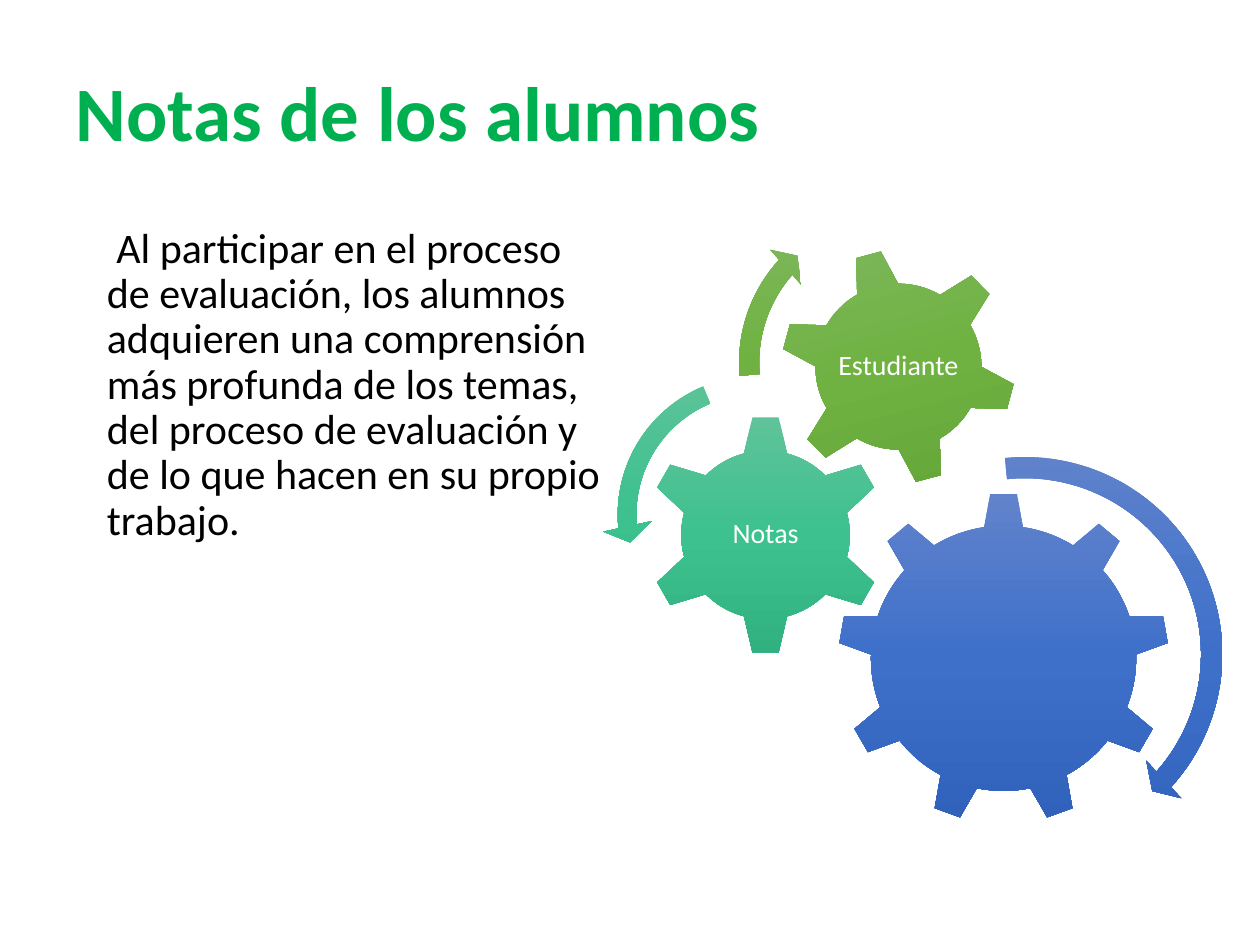
from copy import deepcopy

from pptx import Presentation
from pptx.dml import color
from pptx.enum import shapes, text
from pptx.oxml import ns
from pptx.util import Pt

FONT = "Calibri"
COLORS = {
    "title": "00B050",
    "body": "000000",
    "label": "FFFFFF",
    "blue": ("6183CB", "3E70CA", "3062BB"),
    "teal": ("60C39A", "3DC18F", "31B080"),
    "green": ("81B861", "6FB242", "62A336"),
}
KIND = shapes.MSO_SHAPE

# Squares are left, top, side within the diagram's box
GEARS = [
    dict(kind=KIND.GEAR_9, tone="blue", square=(134.6, 169.2, 189.4)),
    dict(kind=KIND.GEAR_6, tone="teal", square=(24.5, 124.6, 137.5),
         label="Notas", label_side=68),
    dict(kind=KIND.GEAR_6, tone="green", square=(101.5, 29.5, 135.4),
         turn=345, label="Estudiante", label_side=75.6),
]
ARROWS = [
    dict(kind=KIND.CIRCULAR_ARROW, tone="blue", square=(120.2, 140.4, 242.6),
         bends=(0.05, 2.99, 25.2, 158.52, 0.06)),
    dict(kind=KIND.LEFT_CIRCULAR_ARROW, tone="teal", square=(0, 93.6, 176.4),
         bends=(0.06, 4.3, 104.89, 148.38, 0.08)),
    dict(kind=KIND.CIRCULAR_ARROW, tone="green", square=(70.6, 0, 190.1),
         bends=(0.06, 3.94, 133.14, 105.08, 0.07)),
]


def place(shape, box):
    shape.left, shape.top, shape.width, shape.height = map(Pt, box)


def write(para, words, size, tone, bold=False):
    para.line_spacing = 0.9
    span = para.add_run()
    span.text = words
    span.font.name, span.font.size, span.font.bold = FONT, Pt(size), bold
    span.font.color.rgb = color.RGBColor.from_string(COLORS[tone])


def shade(shape, tone):
    """Fill with a three-stop gradient that runs from top to bottom."""
    shape.shadow.inherit = False
    shape.line.fill.background()
    shape.fill.gradient()
    shape.fill.gradient_angle = 270
    stops = next(shape.element.iter(ns.qn("a:gsLst")))
    stops.insert(1, deepcopy(stops[0]))
    for stop, position, tint in zip(shape.fill.gradient_stops, (0, 0.5, 1), COLORS[tone]):
        stop.position = position
        stop.color.rgb = color.RGBColor.from_string(tint)


def add_title(page, box):
    title = page.shapes.title
    place(title, box)
    title.text_frame.vertical_anchor = text.MSO_ANCHOR.MIDDLE
    para = title.text_frame.paragraphs[0]
    para.alignment = text.PP_ALIGN.LEFT
    write(para, "Notas de los alumnos", 44, "title", bold=True)


def add_body(page, box):
    frame = page.shapes.add_textbox(*map(Pt, box)).text_frame
    frame.word_wrap = True
    para = frame.paragraphs[0]
    para.space_before = Pt(10)
    # Hanging indent: the tab carries the first line to the margin
    indent = para._p.get_or_add_pPr()
    indent.set("marL", str(Pt(18)))
    indent.set("indent", str(-Pt(18)))
    write(para, "\t Al participar en el proceso de evaluación, los alumnos "
          "adquieren una comprensión más profunda de los temas, del proceso "
          "de evaluación y de lo que hacen en su propio trabajo.", 24, "body")


def add_label(group, words, center, side):
    corner = [middle - side / 2 for middle in center]
    frame = group.shapes.add_textbox(*map(Pt, (*corner, side, side))).text_frame
    frame.word_wrap = True
    frame.vertical_anchor = text.MSO_ANCHOR.MIDDLE
    frame.margin_left = frame.margin_right = Pt(1.6)
    frame.margin_top = frame.margin_bottom = Pt(1.6)
    para = frame.paragraphs[0]
    para.alignment = text.PP_ALIGN.CENTER
    write(para, words, 16, "label")


def add_gears(page, box):
    group = page.shapes.add_group_shape()
    for part in GEARS + ARROWS:
        left, top, side = part["square"]
        left, top = left + box[0], top + box[1]
        shape = group.shapes.add_shape(part["kind"], *map(Pt, (left, top, side, side)))
        shade(shape, part["tone"])
        shape.rotation = part.get("turn", 0)
        for index, bend in enumerate(part.get("bends", ())):
            shape.adjustments[index] = bend
        if "label" in part:
            center = (left + side / 2, top + side / 2)
            add_label(group, part["label"], center, part["label_side"])


def main():
    deck = Presentation()
    deck.slide_width, deck.slide_height = Pt(720), Pt(540)
    page = deck.slides.add_slide(deck.slide_layouts[5])
    add_title(page, (36, 21.6, 648, 90))
    add_body(page, (36, 126, 318.2, 356.4))
    add_gears(page, (344.2, 112.3))
    deck.save("out.pptx")


if __name__ == "__main__":
    main()
